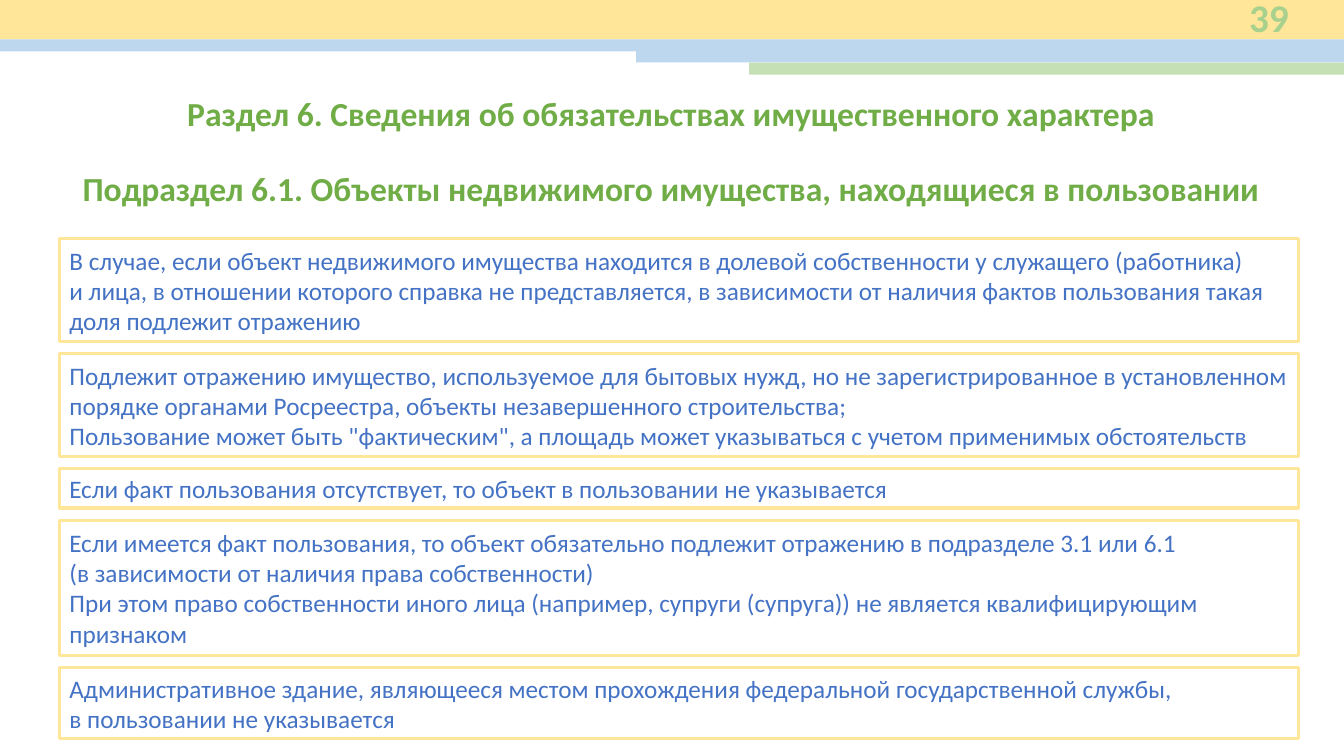
from pptx import Presentation
from pptx.dml.color import RGBColor
from pptx.enum.shapes import MSO_SHAPE as Shape
from pptx.enum.text import MSO_ANCHOR as Anchor, MSO_AUTO_SIZE as AutoSize, PP_ALIGN as Align
from pptx.util import Pt

PX = 9144  # 100 px to the inch
WIDTH, HEIGHT = 1333, 750
COLORS = {
    "yellow": "FFE699",
    "blue": "BDD7EE",
    "pale_green": "C5E0B4",
    "number": "A9D18E",
    "heading": "70AD47",
    "body": "4472C4",
}
HEADING = {"size": Pt(24), "bold": True, "color": "heading", "align": Align.CENTER}
BODY = {"size": Pt(18), "bold": False, "color": "body", "align": Align.LEFT}
NUMBER = {"size": Pt(28), "bold": True, "color": "number", "align": Align.RIGHT}

SECTION = "Раздел 6. Сведения об обязательствах имущественного характера"
SUBSECTION = "Подраздел 6.1. Объекты недвижимого имущества, находящиеся в пользовании"

# Height of each rule box and its paragraphs
RULES = [
    (102, ["В случае, если объект недвижимого имущества находится в долевой собственности "
           "у служащего (работника)\nи лица, в отношении которого справка не представляется, "
           "в зависимости от наличия фактов пользования такая доля подлежит отражению"]),
    (102, ["Подлежит отражению имущество, используемое для бытовых нужд, но не "
           "зарегистрированное в установленном порядке органами Росреестра, "
           "объекты незавершенного строительства;",
           'Пользование может быть "фактическим", а площадь может указываться '
           "с учетом применимых обстоятельств"]),
    (39, ["Если факт пользования отсутствует, то объект в пользовании не указывается"]),
    (134, ["Если имеется факт пользования, то объект обязательно подлежит отражению "
           "в подразделе 3.1 или 6.1\n(в зависимости от наличия права собственности)",
           "При этом право собственности иного лица (например, супруги (супруга)) "
           "не является квалифицирующим признаком"]),
    (71, ["Административное здание, являющееся местом прохождения федеральной "
          "государственной службы,\nв пользовании не указывается"]),
]


def emu(*lengths):
    return [length * PX for length in lengths]


def rgb(name):
    return RGBColor.from_string(COLORS[name])


def write(frame, paragraphs, style, anchor):
    frame_format = {
        "word_wrap": True, "auto_size": AutoSize.NONE, "vertical_anchor": anchor,
        "margin_left": 10 * PX, "margin_right": 10 * PX,
        "margin_top": 5 * PX, "margin_bottom": 5 * PX,
    }
    for name, value in frame_format.items():
        setattr(frame, name, value)
    for index, text in enumerate(paragraphs):
        paragraph = frame.add_paragraph() if index else frame.paragraphs[0]
        paragraph.text = text
        paragraph.alignment = style["align"]
        for run in paragraph.runs:
            for name, value in {"name": "Calibri", "size": style["size"],
                                "bold": style["bold"]}.items():
                setattr(run.font, name, value)
            run.font.color.rgb = rgb(style["color"])


def add_rect(slide, box, fill=None, line=None):
    rect = slide.shapes.add_shape(Shape.RECTANGLE, *emu(*box))
    rect.shadow.inherit = False
    if fill:
        rect.fill.solid()
        rect.fill.fore_color.rgb = rgb(fill)
    else:
        rect.fill.background()
    if line:
        rect.line.color.rgb = rgb(line)
        rect.line.width = Pt(2.25)
    else:
        rect.line.fill.background()
    return rect


def add_header(slide, left, top, width):
    """Stepped colour bands with the page number at the right."""
    right, thin = left + width, 12
    add_rect(slide, (left, top, width, 39), fill="yellow")
    bands = [(left, 39, "blue"), (left + 631, 50, "blue"), (left + 743, 62, "pale_green")]
    for band_left, offset, color in bands:
        add_rect(slide, (band_left, top + offset, right - band_left, thin), fill=color)
    number = slide.shapes.add_textbox(*emu(right - 170, top - 5, 125, 44))
    write(number.text_frame, ["39"], NUMBER, Anchor.MIDDLE)


def add_headings(slide, left, top, width):
    """Section title and the subsection line below it."""
    height, step = 50, 75
    title = slide.shapes.title
    title.left, title.top, title.width, title.height = emu(left, top, width, height)
    write(title.text_frame, [SECTION], HEADING, Anchor.TOP)
    subsection = slide.shapes.add_textbox(*emu(left, top + step, width, height))
    write(subsection.text_frame, [SUBSECTION], HEADING, Anchor.TOP)


def add_rules(slide, left, top, width, gap=12):
    """Outlined rule boxes stacked with equal gaps."""
    for height, paragraphs in RULES:
        rule = add_rect(slide, (left, top, width, height), line="yellow")
        write(rule.text_frame, paragraphs, BODY, Anchor.MIDDLE)
        top += height + gap


def main():
    deck = Presentation()
    deck.slide_width, deck.slide_height = emu(WIDTH, HEIGHT)
    slide = deck.slides.add_slide(deck.slide_layouts[5])
    add_header(slide, 0, 0, WIDTH)
    add_headings(slide, 59, 87, 1213)
    add_rules(slide, 59, 237, 1229)
    deck.save("out.pptx")


if __name__ == "__main__":
    main()
